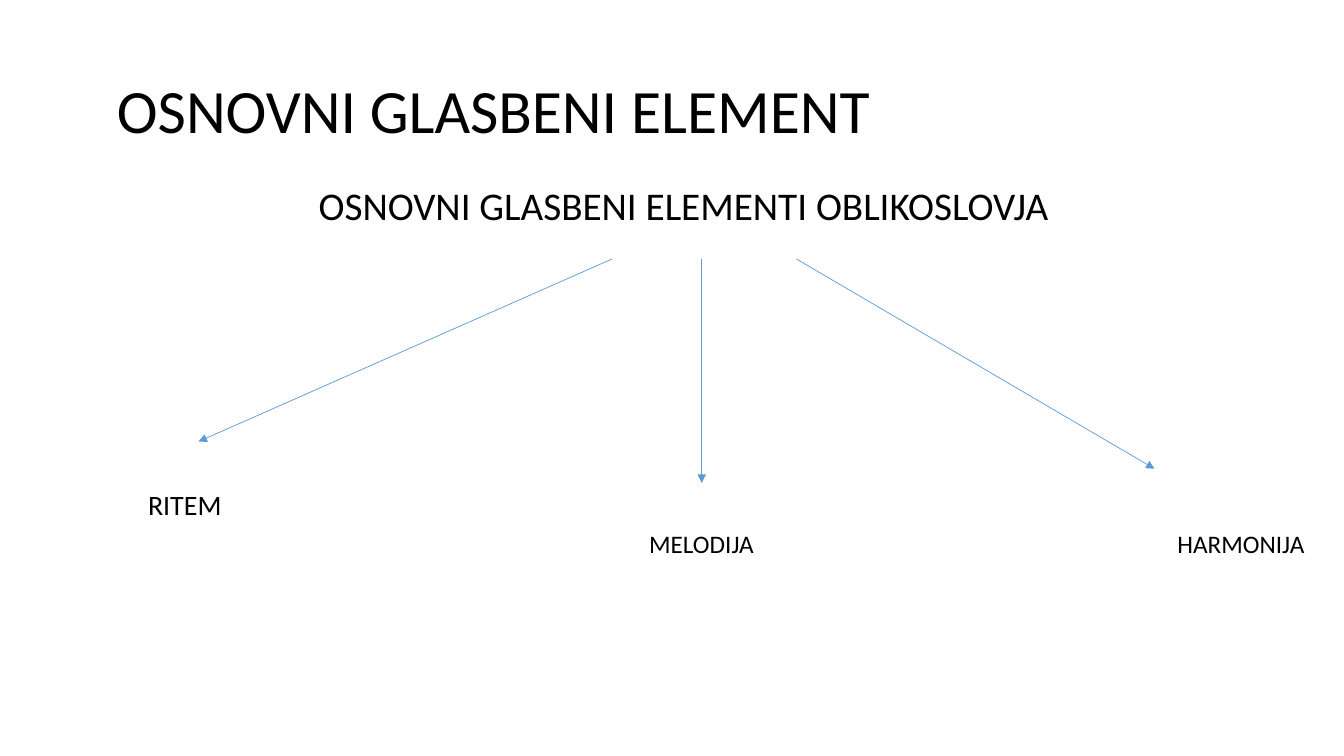
"""Build a slide showing the three basic musical elements of the study of form."""
import pptx
import pptx.util
import pptx.dml.color
import pptx.enum.shapes
import pptx.enum.text
import pptx.oxml
import pptx.oxml.ns

Inches = pptx.util.Inches
Pt = pptx.util.Pt
BLACK = pptx.dml.color.RGBColor(0x00, 0x00, 0x00)
BLUE = pptx.dml.color.RGBColor(0x5B, 0x9B, 0xD5)
MIDDLE = pptx.enum.text.MSO_ANCHOR.MIDDLE
TOP = pptx.enum.text.MSO_ANCHOR.TOP
ARROW_TOP = 2.57

deck = pptx.Presentation()
deck.slide_width = Inches(13.33)
deck.slide_height = Inches(7.5)
page = deck.slides.add_slide(deck.slide_layouts[6])


def add_text(text, place, size, frame_format, para_format):
    box = page.shapes.add_textbox(*map(Inches, place))
    for name, value in frame_format.items():
        setattr(box.text_frame, name, value)
    para = box.text_frame.paragraphs[0]
    for name, value in para_format.items():
        setattr(para, name, value)
    span = para.add_run()
    span.text = text
    for name, value in {"name": "Calibri", "size": Pt(size)}.items():
        setattr(span.font, name, value)
    span.font.color.rgb = BLACK


headings = [
    ("OSNOVNI GLASBENI ELEMENT", (0.92, 0.4, 11.5, 1.45), 44, MIDDLE, 0.24, 0),
    ("OSNOVNI GLASBENI ELEMENTI OBLIKOSLOVJA", (1.04, 1.8, 11.5, 4.76), 28, TOP, 2.12, 10),
]
for text, place, size, anchor, indent, space in headings:
    frame_format = {"word_wrap": True, "vertical_anchor": anchor, "margin_left": Inches(indent)}
    add_text(text, place, size, frame_format, {"line_spacing": 0.9, "space_before": Pt(space)})

arrows = [(6.07, 1.97, 4.38), (6.96, 6.96, 4.79), (7.9, 11.45, 4.65)]
for start_x, end_x, end_y in arrows:
    arrow = page.shapes.add_connector(
        pptx.enum.shapes.MSO_CONNECTOR.STRAIGHT,
        Inches(start_x), Inches(ARROW_TOP), Inches(end_x), Inches(end_y))
    arrow.line.color.rgb = BLUE
    arrow.line.width = Pt(0.5)
    head = pptx.oxml.parse_xml(f'<a:tailEnd {pptx.oxml.ns.nsdecls("a")} type="triangle"/>')
    arrow.line._get_or_add_ln().append(head)
    arrow._element.spPr.append(pptx.oxml.parse_xml(f'<a:effectLst {pptx.oxml.ns.nsdecls("a")}/>'))

elements = [
    ("RITEM", (1.37, 4.79, 0.97, 0.44), 20, True),
    ("MELODIJA", (6.34, 5.19, 1.34, 0.4), 18, True),
    ("HARMONIJA", (11.58, 5.19, 1.47, 0.4), 18, False),
]
for text, place, size, wrap in elements:
    frame_format = {
        "word_wrap": wrap,
        "auto_size": pptx.enum.text.MSO_AUTO_SIZE.SHAPE_TO_FIT_TEXT,
    }
    add_text(text, place, size, frame_format, {})

deck.save("out.pptx")
